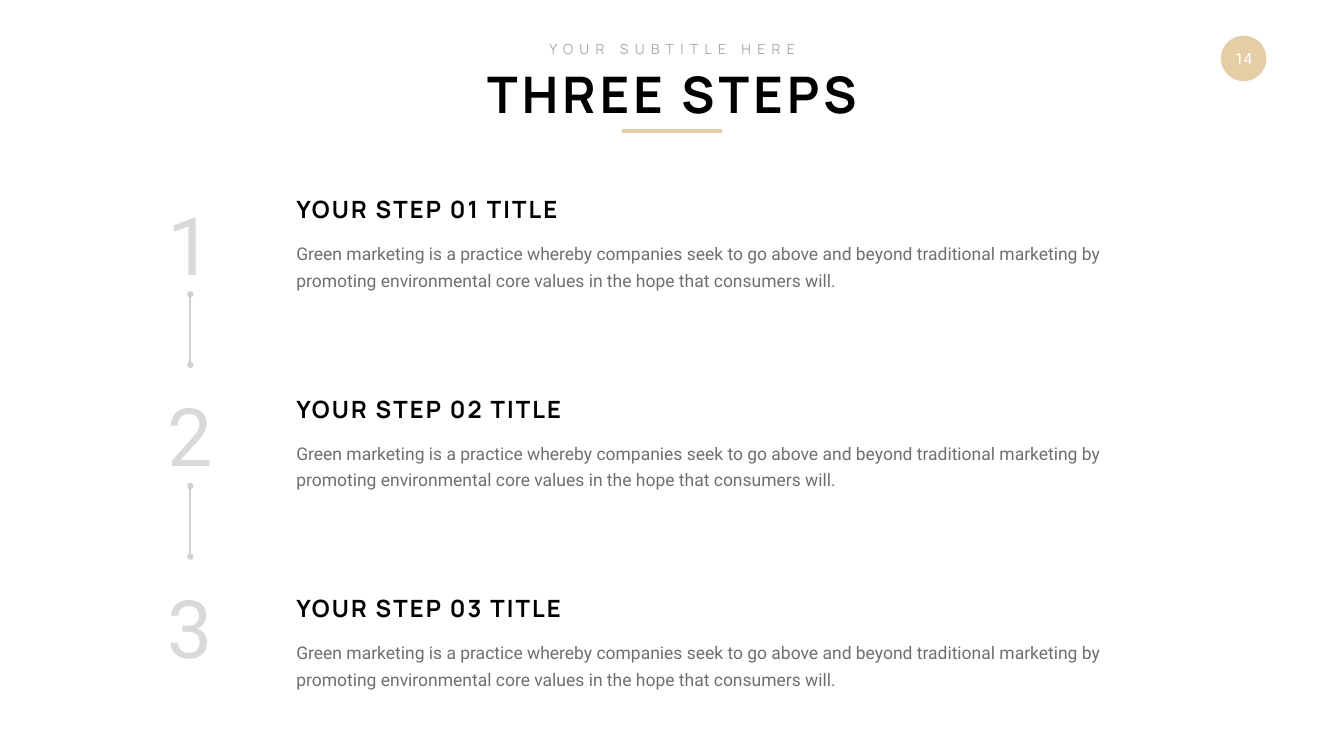
from dataclasses import dataclass

from lxml import etree
from pptx import Presentation
from pptx import util as u
from pptx.dml.color import RGBColor
from pptx.enum import shapes, text
from pptx.oxml.ns import qn


@dataclass(frozen=True)
class Theme:
    """Colours and type styles of the slide."""
    gold: str = "E5CDA6"
    rail: str = "D1D1D0"

    # Each style: size, font, colour, bold, letter spacing in points
    title: tuple = (72, "Manrope", "000000", True, 6)
    subtitle: tuple = (20, "Manrope", "A9A9A9", False, 9)
    heading: tuple = (34, "Manrope", "000000", True, 3)
    body: tuple = (25, "Roboto", "6F6F6F", False, 0)
    number: tuple = (115, "Roboto", "D9D9D9", False, 0)
    badge: tuple = (22, "Roboto", "FFFFFF", False, 0)


LEFT, CENTER = text.PP_ALIGN.LEFT, text.PP_ALIGN.CENTER
TOP, MIDDLE = text.MSO_ANCHOR.TOP, text.MSO_ANCHOR.MIDDLE


def set_all(target, values):
    for name, value in values.items():
        setattr(target, name, value)


class SlideBuilder:
    def __init__(self, slide, theme):
        self.slide = slide
        self.theme = theme

    def put_text(self, shape, words, style, align=LEFT, anchor=TOP, wrap=False,
                 grow=True, line_spacing=1.0):
        """Fill a shape with one styled paragraph."""
        size, font_name, colour, bold, tracking = style
        fit = text.MSO_AUTO_SIZE
        frame = shape.text_frame
        set_all(frame, {
            "text": words,
            "word_wrap": wrap,
            "vertical_anchor": anchor,
            "auto_size": fit.SHAPE_TO_FIT_TEXT if grow else fit.NONE,
        })
        paragraph = frame.paragraphs[0]
        set_all(paragraph, {"alignment": align, "line_spacing": line_spacing,
                            "space_before": u.Pt(0)})
        run = paragraph.runs[0]
        set_all(run.font, {"size": u.Pt(size), "name": font_name, "bold": bold})
        run.font.color.rgb = RGBColor.from_string(colour)
        if tracking:
            run.font._element.set("spc", str(tracking * 100))
        return shape

    def placeholder(self, index, box, words, style):
        shape = self.slide.placeholders[index]
        names = ("left", "top", "width", "height")
        set_all(shape, dict(zip(names, map(u.Cm, box))))
        return self.put_text(shape, words, style, align=CENTER)

    def text_box(self, box, words, style, **layout):
        shape = self.slide.shapes.add_textbox(*map(u.Cm, box))
        return self.put_text(shape, words, style, **layout)

    def badge(self, box, words):
        shape = self.slide.shapes.add_shape(
            shapes.MSO_SHAPE.OVAL, *map(u.Cm, box))
        shape.shadow.inherit = False
        shape.fill.solid()
        shape.fill.fore_color.rgb = RGBColor.from_string(self.theme.gold)
        shape.line.fill.background()
        margins = ("margin_left", "margin_top", "margin_right", "margin_bottom")
        set_all(shape.text_frame, dict.fromkeys(margins, 0))
        return self.put_text(shape, words, self.theme.badge, align=CENTER,
                             anchor=MIDDLE, grow=False)

    def line(self, ends, colour, width, dots=False):
        connector = self.slide.shapes.add_connector(
            shapes.MSO_CONNECTOR.STRAIGHT, *map(u.Cm, ends))
        connector.line.color.rgb = RGBColor.from_string(colour)
        connector.line.width = u.Pt(width)
        properties = connector._element.spPr
        if dots:
            outline = properties.find(qn("a:ln"))
            for end in ("a:headEnd", "a:tailEnd"):
                etree.SubElement(outline, qn(end), type="oval")
        etree.SubElement(properties, qn("a:effectLst"))
        return connector


def main():
    presentation = Presentation()
    set_all(presentation, {"slide_width": u.Cm(67.72),
                           "slide_height": u.Cm(38.1)})
    slide = presentation.slides.add_slide(presentation.slide_layouts[0])
    theme = Theme()
    builder = SlideBuilder(slide, theme)

    # Page number and header
    builder.badge((61.52, 1.8, 2.29, 2.29), "14")
    builder.placeholder(0, (24.05, 3.05, 19.63, 3.33), "THREE STEPS", theme.title)
    builder.placeholder(1, (26.95, 1.93, 13.84, 1.12), "YOUR SUBTITLE HERE",
                        theme.subtitle)
    builder.line((31.32, 6.6, 36.37, 6.6), theme.gold, 5)

    # Steps: a description and a heading in each row
    description = (
        "Green marketing is a practice whereby companies seek to go above and "
        "beyond traditional marketing by promoting environmental core values "
        "in the hope that consumers will.")
    step_count, row_pitch, text_left = 3, 10.06, 14.68
    for step in range(step_count):
        offset = step * row_pitch
        builder.text_box((text_left, 11.84 + offset, 44.86, 2.9), description,
                         theme.body, wrap=True, line_spacing=u.Pt(38))
        builder.text_box((text_left, 9.68 + offset, 14.4, 1.7),
                         f"YOUR STEP {step + 1:02} TITLE", theme.heading,
                         anchor=MIDDLE)

    # Large numbers, each linked down towards the next
    number_pitch, number_left, number_width, number_height = 9.66, 8.18, 2.82, 5.18
    rail_x, rail_length = number_left + number_width / 2, 3.56
    for step in range(step_count):
        top = 9.65 + step * number_pitch
        bottom = top + number_height
        number = builder.text_box(
            (number_left, top, number_width, number_height), str(step + 1),
            theme.number, align=CENTER, anchor=MIDDLE)
        if step < step_count - 1:
            rail = builder.line((rail_x, bottom, rail_x, bottom + rail_length),
                                theme.rail, 3, dots=True)
            rail.begin_connect(number, 2)

    presentation.save("out.pptx")


if __name__ == "__main__":
    main()
